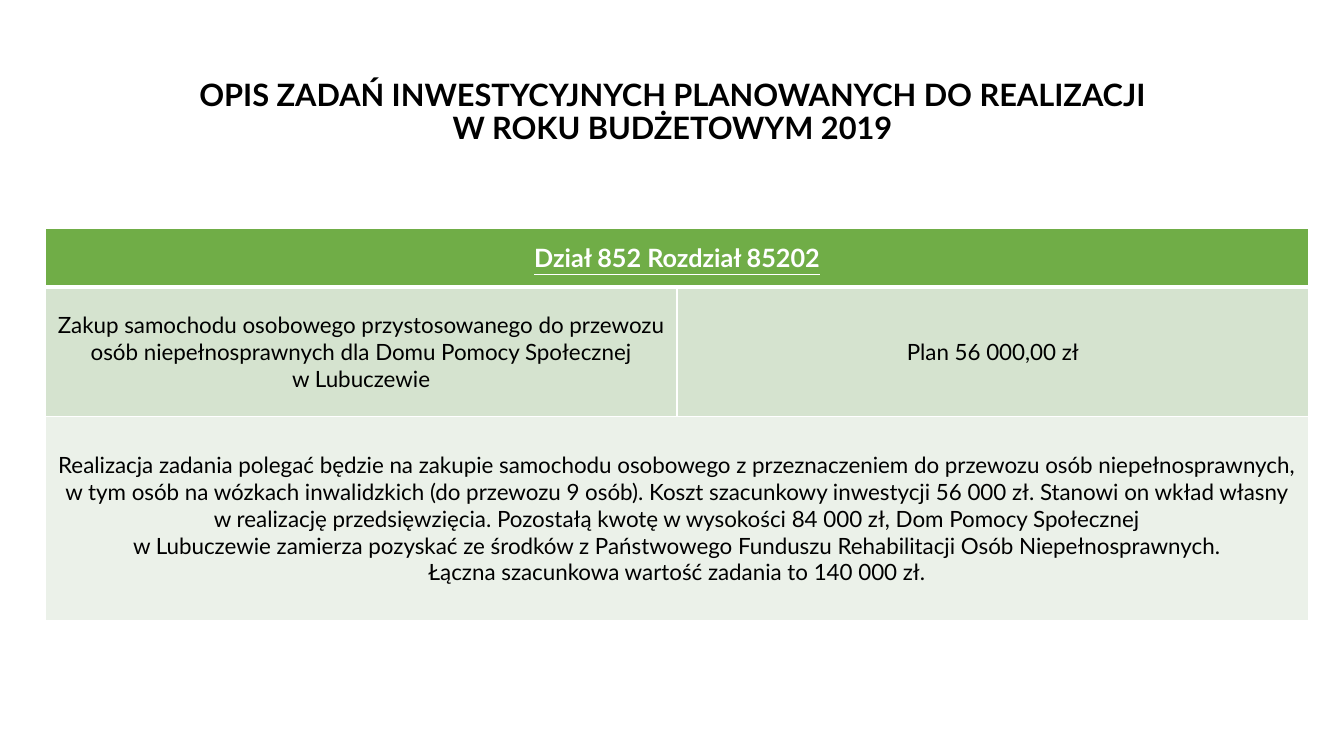
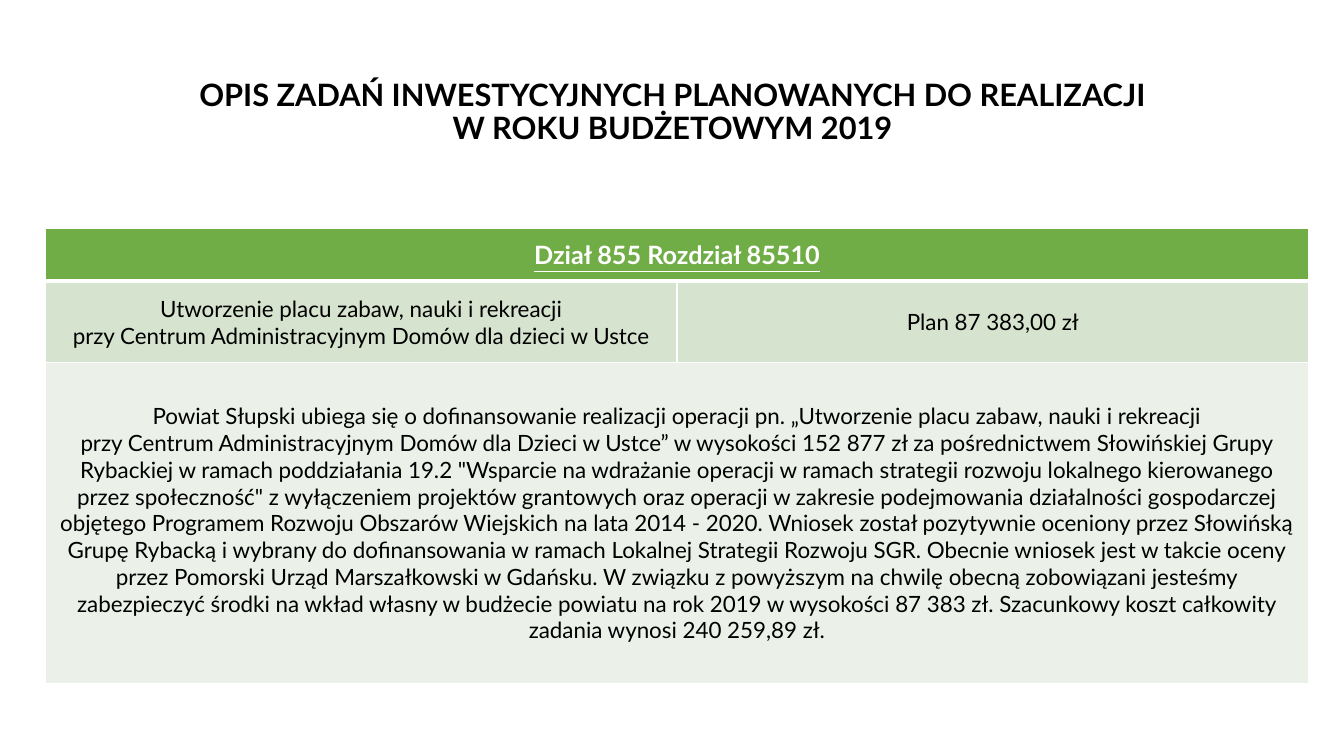
"""Build two slides describing planned investment tasks."""
from dataclasses import dataclass

from lxml.etree import SubElement
from pptx import Presentation
from pptx.dml.color import RGBColor
from pptx.enum.text import MSO_ANCHOR as Anchor, MSO_AUTO_SIZE as AutoSize, PP_ALIGN as Align
from pptx.oxml.ns import qn
from pptx.presentation import Presentation as Deck
from pptx.slide import Slide
from pptx.table import _Cell as Cell
from pptx.text.text import Font
from pptx.util import Inches, Pt

BLACK = RGBColor(0x00, 0x00, 0x00)
WHITE = RGBColor(0xFF, 0xFF, 0xFF)
GREEN = RGBColor(0x70, 0xAD, 0x47)
LIGHT_GREEN = RGBColor(0xD5, 0xE3, 0xCF)
PALE_GREEN = RGBColor(0xEB, 0xF1, 0xE9)
FONT_NAME = "Lato"
TITLE_LINES = ("OPIS ZADAŃ INWESTYCYJNYCH PLANOWANYCH DO REALIZACJI", "W ROKU BUDŻETOWYM 2019")
TITLE_ONLY = 5
THIN, THICK = 1, 3

PLAYGROUND_GRANT = (
    "przy Centrum Administracyjnym Domów dla Dzieci w Ustce” w wysokości 152 877 zł "
    "za pośrednictwem Słowińskiej Grupy Rybackiej w ramach poddziałania 19.2 "
    '"Wsparcie na wdrażanie operacji w ramach strategii rozwoju lokalnego kierowanego '
    'przez społeczność" z wyłączeniem projektów grantowych oraz operacji w zakresie '
    "podejmowania działalności gospodarczej objętego Programem Rozwoju Obszarów Wiejskich "
    "na lata 2014 - 2020."
)
PLAYGROUND_STATUS = (
    "Wniosek został pozytywnie oceniony przez Słowińską Grupę Rybacką "
    "i wybrany do dofinansowania w ramach Lokalnej Strategii Rozwoju SGR. Obecnie wniosek "
    "jest w takcie oceny przez Pomorski Urząd Marszałkowski w Gdańsku. W związku "
    "z powyższym na chwilę obecną zobowiązani jesteśmy zabezpieczyć środki na wkład własny "
    "w budżecie powiatu na rok 2019 w wysokości 87 383 zł. Szacunkowy koszt całkowity "
    "zadania wynosi 240 259,89 zł."
)


@dataclass(frozen=True)
class CellStyle:
    """Look of the cells in one table row."""

    fill: RGBColor
    color: RGBColor = BLACK
    size: int = 16
    heading: bool = False


@dataclass(frozen=True)
class Task:
    """One investment task with its row heights in inches."""

    section: str
    name: tuple[str, ...]
    plan: str
    description: tuple[str, ...]
    heights: tuple[float, ...]


ROW_STYLES = (
    CellStyle(GREEN, WHITE, 18, True),
    CellStyle(LIGHT_GREEN),
    CellStyle(PALE_GREEN),
)

TASKS = (
    Task(
        "Dział 852 Rozdział 85202",
        (
            "Zakup samochodu osobowego przystosowanego do przewozu "
            "osób niepełnosprawnych dla Domu Pomocy Społecznej",
            "w Lubuczewie",
        ),
        "Plan 56 000,00 zł",
        (
            "Realizacja zadania polegać będzie na zakupie samochodu osobowego z przeznaczeniem "
            "do przewozu osób niepełnosprawnych, w tym osób na wózkach inwalidzkich "
            "(do przewozu 9 osób). Koszt szacunkowy inwestycji 56 000 zł. Stanowi on wkład własny "
            "w realizację przedsięwzięcia. Pozostałą kwotę w wysokości 84 000 zł, "
            "Dom Pomocy Społecznej",
            "w Lubuczewie zamierza pozyskać ze środków z Państwowego Funduszu Rehabilitacji "
            "Osób Niepełnosprawnych.",
            "Łączna szacunkowa wartość zadania to 140 000 zł.",
        ),
        (0.58, 1.28, 2.03),
    ),
    Task(
        "Dział 855 Rozdział 85510",
        (
            "Utworzenie placu zabaw, nauki i rekreacji",
            "przy Centrum Administracyjnym Domów dla dzieci w Ustce",
        ),
        "Plan 87 383,00 zł",
        (
            "Powiat Słupski ubiega się o dofinansowanie realizacji operacji pn. "
            "„Utworzenie placu zabaw, nauki i rekreacji",
            f"{PLAYGROUND_GRANT} {PLAYGROUND_STATUS}",
        ),
        (0.52, 0.81, 3.18),
    ),
)


def style_font(font: Font, size: int, color: RGBColor, bold: bool, underline: bool = False) -> None:
    """Apply the shared typeface and the given look."""
    font.name = FONT_NAME
    font.size = Pt(size)
    font.bold = bold
    font.underline = underline
    font.color.rgb = color


def add_title(page: Slide) -> None:
    """Place and fill the shared title."""
    title = page.shapes.title
    title.left, title.top = Inches(0.92), Inches(0.4)
    title.width, title.height = Inches(11.5), Inches(1.45)
    frame = title.text_frame
    frame.auto_size = AutoSize.NONE
    frame.word_wrap = True
    frame.vertical_anchor = Anchor.MIDDLE
    para = frame.paragraphs[0]
    para.alignment = Align.CENTER
    para.line_spacing = 0.9
    for index, line in enumerate(TITLE_LINES):
        if index:
            para.add_line_break()
        span = para.add_run()
        span.text = line
        style_font(span.font, 22, BLACK, True)


def add_borders(cell: Cell, top: int, bottom: int) -> None:
    """Draw white borders of the given point widths around a cell."""
    properties = cell._tc.get_or_add_tcPr()
    for side, width in (("L", THIN), ("R", THIN), ("T", top), ("B", bottom)):
        line = SubElement(properties, qn(f"a:ln{side}"), w=str(Pt(width)))
        fill = SubElement(line, qn("a:solidFill"))
        SubElement(fill, qn("a:srgbClr"), val=str(WHITE))


def fill_cell(cell: Cell, lines: tuple[str, ...], style: CellStyle) -> None:
    """Write centred paragraphs into a cell."""
    cell.vertical_anchor = Anchor.MIDDLE
    frame = cell.text_frame
    for index, line in enumerate(lines):
        para = frame.add_paragraph() if index else frame.paragraphs[0]
        para.alignment = Align.CENTER
        span = para.add_run()
        span.text = line
        style_font(span.font, style.size, style.color, style.heading, style.heading)


def add_task_table(page: Slide, task: Task) -> None:
    """Add the table that describes one task."""
    rows = (((task.section,),), (task.name, (task.plan,)), (task.description,))
    table = page.shapes.add_table(
        len(rows), 2, Inches(0.45), Inches(2.27), Inches(12.53), Inches(sum(task.heights))
    ).table
    for row, (texts, style, height) in enumerate(zip(rows, ROW_STYLES, task.heights)):
        table.rows[row].height = Inches(height)
        for column in range(2):
            cell = table.cell(row, column)
            add_borders(cell, THICK if row == 1 else THIN, THICK if row == 0 else THIN)
            cell.fill.solid()
            cell.fill.fore_color.rgb = style.fill
        if len(texts) == 1:
            table.cell(row, 0).merge(table.cell(row, 1))
        for column, lines in enumerate(texts):
            fill_cell(table.cell(row, column), lines, style)


def add_task_page(deck: Deck, task: Task) -> None:
    """Add one slide with the title and the task table."""
    page = deck.slides.add_slide(deck.slide_layouts[TITLE_ONLY])
    add_title(page)
    add_task_table(page, task)


def main() -> None:
    """Build and save the deck."""
    deck = Presentation()
    deck.slide_width, deck.slide_height = Inches(13.33), Inches(7.5)
    for task in TASKS:
        add_task_page(deck, task)
    deck.save("out.pptx")


if __name__ == "__main__":
    main()
